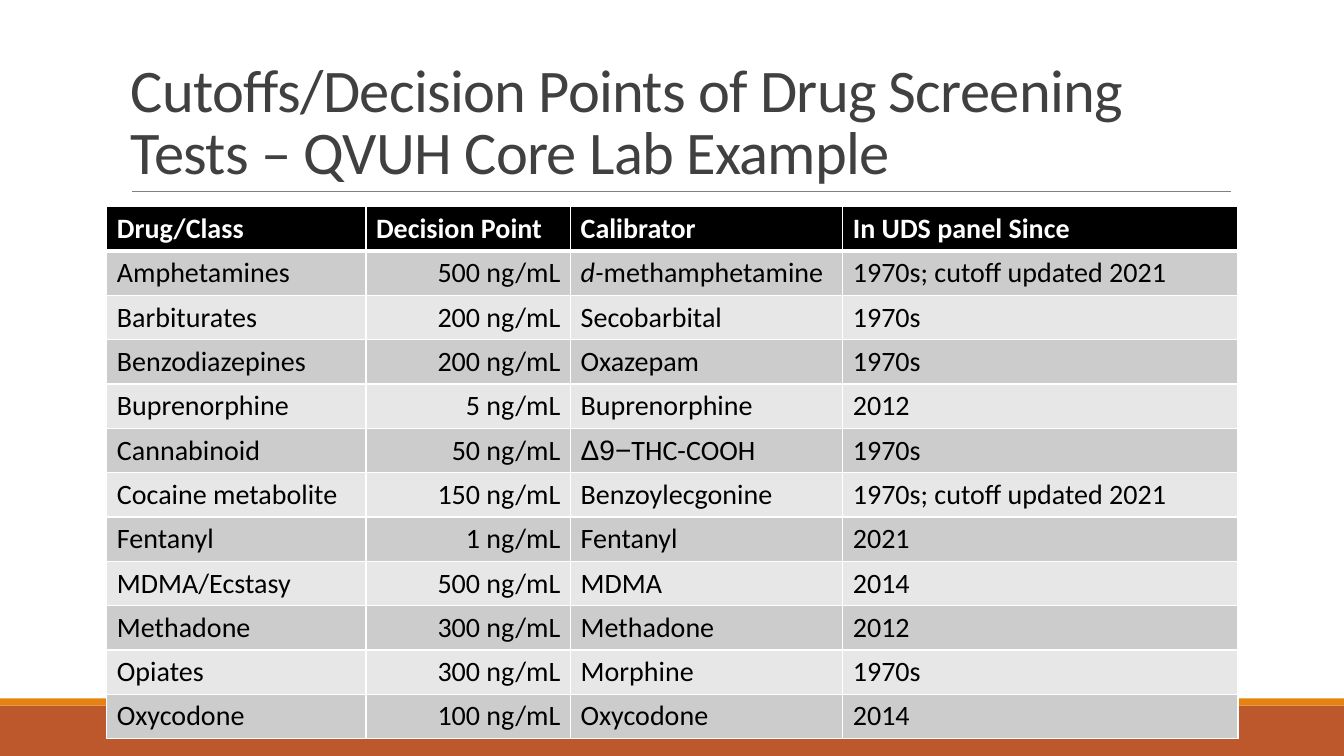
"""Build a slide tabulating drug screening cutoffs."""
from lxml import etree
from pptx import Presentation
from pptx import util as u
from pptx.dml.color import RGBColor
from pptx.enum import shapes, text
from pptx.oxml import ns

COLOURS = {
    "rust": "BD582C", "orange": "E48312", "rule": "808080", "title": "404040",
    "white": "FFFFFF", "black": "000000", "dark_band": "CCCCCC", "light_band": "E7E7E7",
}
TITLE = "Cutoffs/Decision Points of Drug Screening Tests – QVUH Core Lab Example"
HEADINGS = ["Drug/Class", "Decision Point", "Calibrator", "In UDS panel Since"]
DRUGS = [
    ("Amphetamines", 500, "d-methamphetamine", "1970s; cutoff updated 2021"),
    ("Barbiturates", 200, "Secobarbital", "1970s"),
    ("Benzodiazepines", 200, "Oxazepam", "1970s"),
    ("Buprenorphine", 5, "Buprenorphine", "2012"),
    ("Cannabinoid", 50, "Δ9−THC-COOH", "1970s"),
    ("Cocaine metabolite", 150, "Benzoylecgonine", "1970s; cutoff updated 2021"),
    ("Fentanyl", 1, "Fentanyl", "2021"),
    ("MDMA/Ecstasy", 500, "MDMA", "2014"),
    ("Methadone", 300, "Methadone", "2012"),
    ("Opiates", 300, "Morphine", "1970s"),
    ("Oxycodone", 100, "Oxycodone", "2014"),
]
STYLED_PREFIXES = {"d-": {"italic": True}, "Δ9−": {"font": "Arial"}}
COLUMN_WIDTHS = [2.57, 2.03, 2.7, 3.92]
ROW_HEIGHT = 0.44


def colour(name):
    return RGBColor.from_string(COLOURS[name])


def add_span(para, words, size, tint, bold=False, italic=False, font="Calibri"):
    span = para.add_run()
    span.text = words
    span.font.name = font
    span.font.size = u.Pt(size)
    span.font.bold = bold
    span.font.italic = italic
    span.font.color.rgb = colour(tint)
    return span


def add_band(page, top, height, tint):
    band = page.shapes.add_shape(
        shapes.MSO_SHAPE.RECTANGLE, 0, u.Inches(top), u.Inches(13.33), u.Inches(height))
    band.shadow.inherit = False
    band.fill.solid()
    band.fill.fore_color.rgb = colour(tint)
    band.line.fill.background()


def add_rule(page, left, right, top):
    rule = page.shapes.add_connector(
        shapes.MSO_CONNECTOR.STRAIGHT,
        u.Inches(left), u.Inches(top), u.Inches(right), u.Inches(top))
    rule.line.color.rgb = colour("rule")
    rule.line.width = u.Pt(0.5)
    etree.SubElement(rule._element.spPr, ns.qn("a:effectLst"))


def add_title(page):
    box = page.shapes.add_textbox(u.Inches(1.2), u.Inches(0.31), u.Inches(11), u.Inches(1.59))
    frame = box.text_frame
    frame.word_wrap = True
    frame.vertical_anchor = text.MSO_ANCHOR.BOTTOM
    para = frame.paragraphs[0]
    para.line_spacing = 0.85
    span = add_span(para, TITLE, 43.2, "title")
    span.font._element.set("spc", "-50")


def set_borders(cell, bottom_width):
    properties = cell._tc.get_or_add_tcPr()
    for side, width in (("L", 1), ("R", 1), ("T", 1), ("B", bottom_width)):
        edge = etree.SubElement(properties, ns.qn(f"a:ln{side}"), w=str(u.Pt(width)))
        fill = etree.SubElement(edge, ns.qn("a:solidFill"))
        etree.SubElement(fill, ns.qn("a:srgbClr"), val=COLOURS["white"])


def fill_cell(cell, words, band, header, right):
    set_borders(cell, 3 if header else 1)
    cell.fill.solid()
    cell.fill.fore_color.rgb = colour(band)
    para = cell.text_frame.paragraphs[0]
    para.alignment = text.PP_ALIGN.RIGHT if right else text.PP_ALIGN.LEFT
    tint = "white" if header else "black"
    for prefix, style in STYLED_PREFIXES.items():
        if words.startswith(prefix):
            add_span(para, prefix, 20, tint, **style)
            words = words.removeprefix(prefix)
    add_span(para, words, 20, tint, bold=header)


def add_drug_table(page):
    rows = [HEADINGS] + [
        (drug, f"{cutoff} ng/mL", calibrator, since)
        for drug, cutoff, calibrator, since in DRUGS]
    table = page.shapes.add_table(
        len(rows), len(HEADINGS), u.Inches(1.06), u.Inches(2.05),
        u.Inches(sum(COLUMN_WIDTHS)), u.Inches(ROW_HEIGHT * len(rows))).table
    for column, width in zip(table.columns, COLUMN_WIDTHS):
        column.width = u.Inches(width)
    for index, row in enumerate(rows):
        table.rows[index].height = u.Inches(ROW_HEIGHT)
        header = index == 0
        band = "black" if header else ("light_band", "dark_band")[index % 2]
        for place, words in enumerate(row):
            fill_cell(table.cell(index, place), words, band, header,
                      right=place == 1 and not header)


def main():
    deck = Presentation()
    deck.slide_width = u.Inches(13.33)
    deck.slide_height = u.Inches(7.5)
    page = deck.slides.add_slide(deck.slide_layouts[6])
    add_band(page, 7, 0.5, "rust")
    add_band(page, 6.93, 0.07, "orange")
    add_rule(page, 1.31, 12.21, 1.9)
    add_title(page)
    add_drug_table(page)
    deck.save("out.pptx")


if __name__ == "__main__":
    main()
